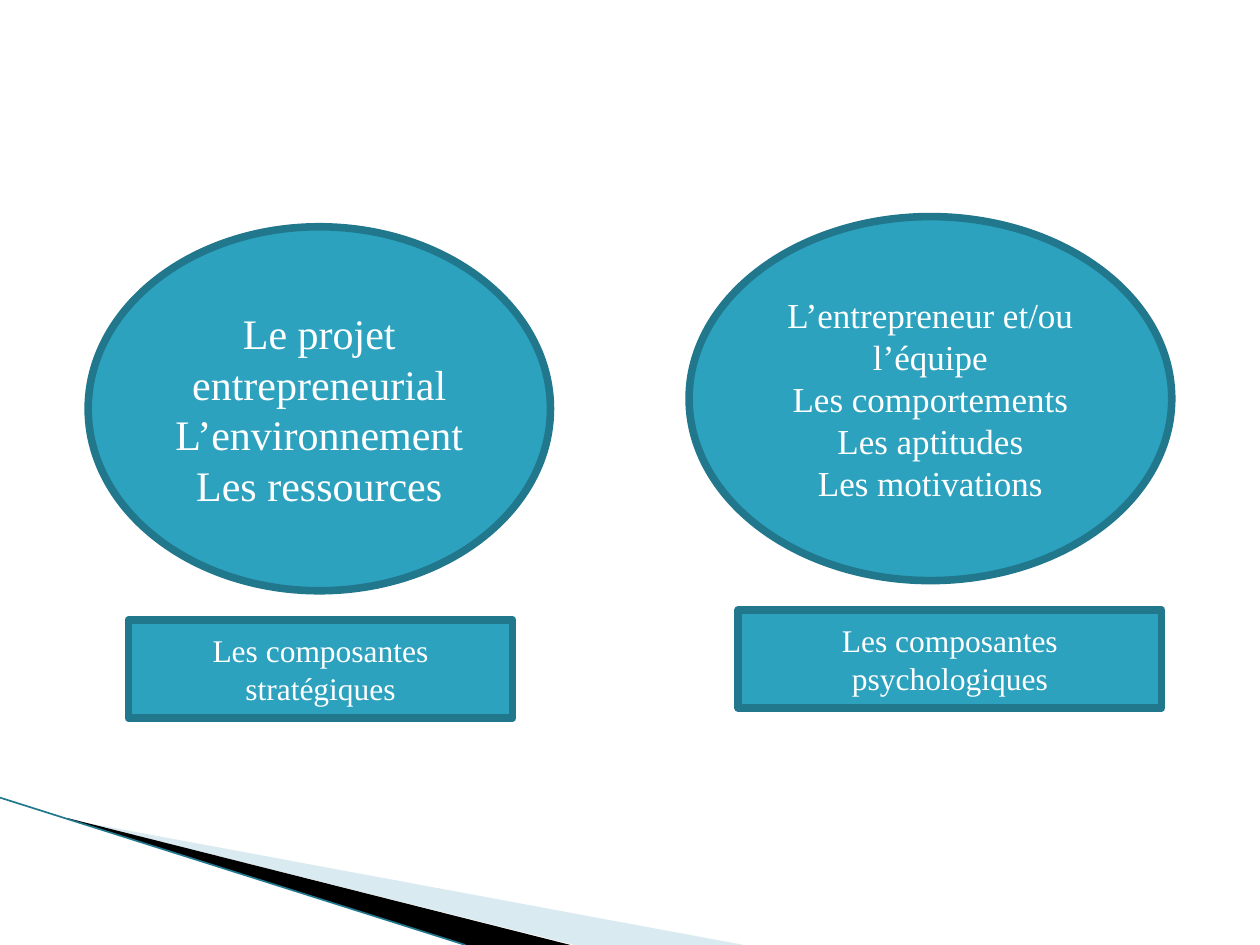
from dataclasses import dataclass

from lxml.etree import SubElement
from pptx import Presentation
from pptx.dml.color import RGBColor
from pptx.enum.shapes import MSO_CONNECTOR, MSO_SHAPE
from pptx.enum.text import MSO_ANCHOR, PP_ALIGN
from pptx.oxml.ns import qn
from pptx.util import Pt

WHITE = RGBColor(0xFF, 0xFF, 0xFF)
BLACK = RGBColor(0x00, 0x00, 0x00)
TEAL = RGBColor(0x2D, 0xA2, 0xBF)
DARK_TEAL = RGBColor(0x21, 0x78, 0x8D)
PALE_BLUE = RGBColor(0xA0, 0xCB, 0xDC)
FONT = "Times New Roman"


@dataclass
class Component:
    outline: MSO_SHAPE
    left: float
    top: float
    width: float
    height: float
    size: int
    lines: list[str]


@dataclass
class Wedge:
    points: list[tuple[float, float]]
    color: RGBColor
    opacity: int = 100


WEDGES = [
    Wedge([(39.6, 468.4), (425, 540), (328.3, 540), (39.6, 468)], PALE_BLUE, 40),
    Wedge([(38.5, 467.5), (326, 540), (266, 540), (38.5, 468)], BLACK),
]

COMPONENTS = [
    Component(MSO_SHAPE.OVAL, 50.4, 129.6, 264.2, 208, 24,
              ["Le projet entrepreneurial", "L’environnement", "Les ressources"]),
    Component(MSO_SHAPE.OVAL, 393.8, 123.8, 275.8, 208, 20,
              ["L’entrepreneur et/ou l’équipe", "Les comportements",
               "Les aptitudes", "Les motivations"]),
    Component(MSO_SHAPE.RECTANGLE, 421.9, 348.5, 241.9, 56.2, 18,
              ["Les composantes psychologiques"]),
    Component(MSO_SHAPE.RECTANGLE, 73.4, 354.2, 219.6, 56.2, 18,
              ["Les composantes stratégiques"]),
]


def draw_wedge(slide, wedge: Wedge) -> None:
    start, *others = [(Pt(x), Pt(y)) for x, y in wedge.points]
    builder = slide.shapes.build_freeform(*start)
    builder.add_line_segments(others, close=True)
    shape = builder.convert_to_shape()
    shape.shadow.inherit = False
    shape.fill.solid()
    shape.fill.fore_color.rgb = wedge.color
    shape.line.fill.background()
    if wedge.opacity < 100:
        color = shape.fill._xPr.find(f".//{qn('a:srgbClr')}")
        SubElement(color, qn("a:alpha"), val=str(wedge.opacity * 1000))


def draw_edge(slide) -> None:
    """Draw the thin line along the lower side of the wedges."""
    edge = slide.shapes.add_connector(
        MSO_CONNECTOR.STRAIGHT, Pt(0), Pt(455.8), Pt(266), Pt(540))
    edge.line.color.rgb = DARK_TEAL
    edge.line.width = Pt(0.95)
    SubElement(edge._element.spPr, qn("a:effectLst"))


def draw_component(slide, component: Component) -> None:
    shape = slide.shapes.add_shape(
        component.outline, Pt(component.left), Pt(component.top),
        Pt(component.width), Pt(component.height))
    shape.shadow.inherit = False
    shape.fill.solid()
    shape.fill.fore_color.rgb = TEAL
    shape.line.color.rgb = DARK_TEAL
    shape.line.width = Pt(4.33)

    frame = shape.text_frame
    frame.word_wrap = True
    frame.vertical_anchor = MSO_ANCHOR.MIDDLE
    frame.text = "\n".join(component.lines)
    for paragraph in frame.paragraphs:
        paragraph.alignment = PP_ALIGN.CENTER
        paragraph.font.name = FONT
        paragraph.font.size = Pt(component.size)
        paragraph.font.color.rgb = WHITE


def main() -> None:
    presentation = Presentation()
    presentation.slide_width = Pt(720)
    presentation.slide_height = Pt(540)
    blank_layout = presentation.slide_layouts[6]
    slide = presentation.slides.add_slide(blank_layout)

    for wedge in WEDGES:
        draw_wedge(slide, wedge)
    draw_edge(slide)
    for component in COMPONENTS:
        draw_component(slide, component)

    presentation.save("out.pptx")


if __name__ == "__main__":
    main()
